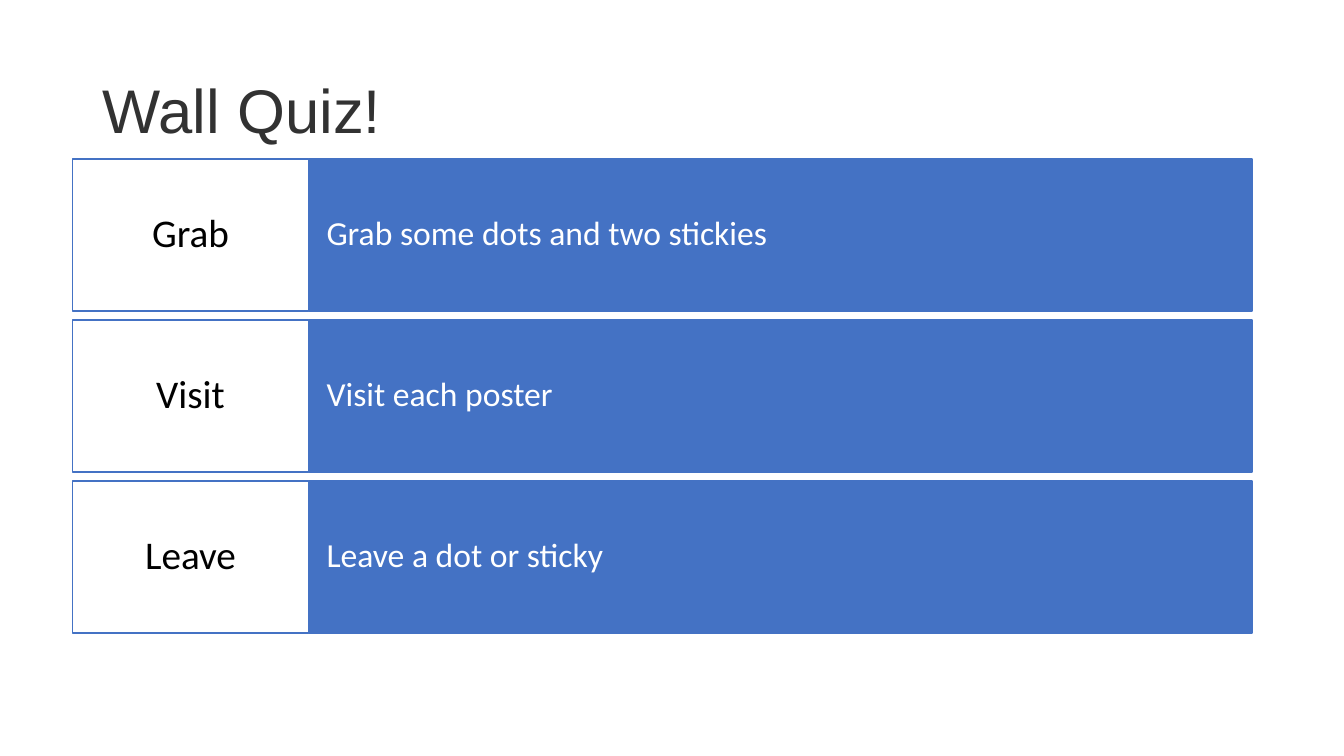
from dataclasses import dataclass

import pptx
import pptx.dml.color
import pptx.enum.shapes
import pptx.enum.text
import pptx.slide
import pptx.util

Pt = pptx.util.Pt
RGBColor = pptx.dml.color.RGBColor
ALIGN = pptx.enum.text.PP_ALIGN
MIDDLE = pptx.enum.text.MSO_ANCHOR.MIDDLE

BLUE = RGBColor(0x44, 0x72, 0xC4)
WHITE = RGBColor(0xFF, 0xFF, 0xFF)
BLACK = RGBColor(0x00, 0x00, 0x00)
CHARCOAL = RGBColor(0x32, 0x32, 0x32)

FIRST_STEP_TOP = 113.5
STEP_PITCH = 115
STEP_HEIGHT = 108.72


@dataclass(frozen=True)
class Step:
    action: str
    instruction: str


@dataclass(frozen=True)
class Column:
    left: float
    width: float
    fill: RGBColor
    text_color: RGBColor
    size: float
    align: ALIGN
    side_inset: float
    end_inset: float


ACTION = Column(51.84, 168.48, WHITE, BLACK, 28, ALIGN.CENTER, 8.64, 10.8)
INSTRUCTION = Column(220.32, 673.92, BLUE, WHITE, 24, ALIGN.LEFT, 12.96, 27.36)

STEPS = [
    Step("Grab", "Grab some dots and two stickies"),
    Step("Visit", "Visit each poster"),
    Step("Leave", "Leave a dot or sticky"),
]


def add_title(slide: pptx.slide.Slide, text: str) -> None:
    title = slide.shapes.title
    title.left, title.top = Pt(66.24), Pt(28.8)
    title.width, title.height = Pt(828), Pt(104.4)
    title.text_frame.text = text
    title.text_frame.vertical_anchor = MIDDLE
    heading = title.text_frame.paragraphs[0]
    heading.alignment = ALIGN.LEFT
    heading.line_spacing = 0.9
    heading.font.name = "Arial"
    heading.font.size = Pt(44)
    heading.font.color.rgb = CHARCOAL


def add_cell(slide: pptx.slide.Slide, column: Column, top: float, text: str) -> None:
    cell = slide.shapes.add_shape(
        pptx.enum.shapes.MSO_SHAPE.RECTANGLE,
        Pt(column.left), Pt(top), Pt(column.width), Pt(STEP_HEIGHT),
    )
    cell.shadow.inherit = False
    cell.fill.solid()
    cell.fill.fore_color.rgb = column.fill
    cell.line.color.rgb = BLUE
    cell.line.width = Pt(1)
    frame = cell.text_frame
    frame.word_wrap = True
    frame.vertical_anchor = MIDDLE
    frame.margin_left = frame.margin_right = Pt(column.side_inset)
    frame.margin_top = frame.margin_bottom = Pt(column.end_inset)
    frame.text = text
    label = frame.paragraphs[0]
    label.alignment = column.align
    label.line_spacing = 0.9
    label.font.name = "Calibri"
    label.font.size = Pt(column.size)
    label.font.color.rgb = column.text_color


def main() -> None:
    deck = pptx.Presentation()
    deck.slide_width, deck.slide_height = Pt(960), Pt(540)
    quiz = deck.slides.add_slide(deck.slide_layouts[5])
    add_title(quiz, "Wall Quiz!")
    for index, step in enumerate(STEPS):
        top = FIRST_STEP_TOP + index * STEP_PITCH
        add_cell(quiz, INSTRUCTION, top, step.instruction)
        add_cell(quiz, ACTION, top, step.action)
    deck.save("out.pptx")


if __name__ == "__main__":
    main()
